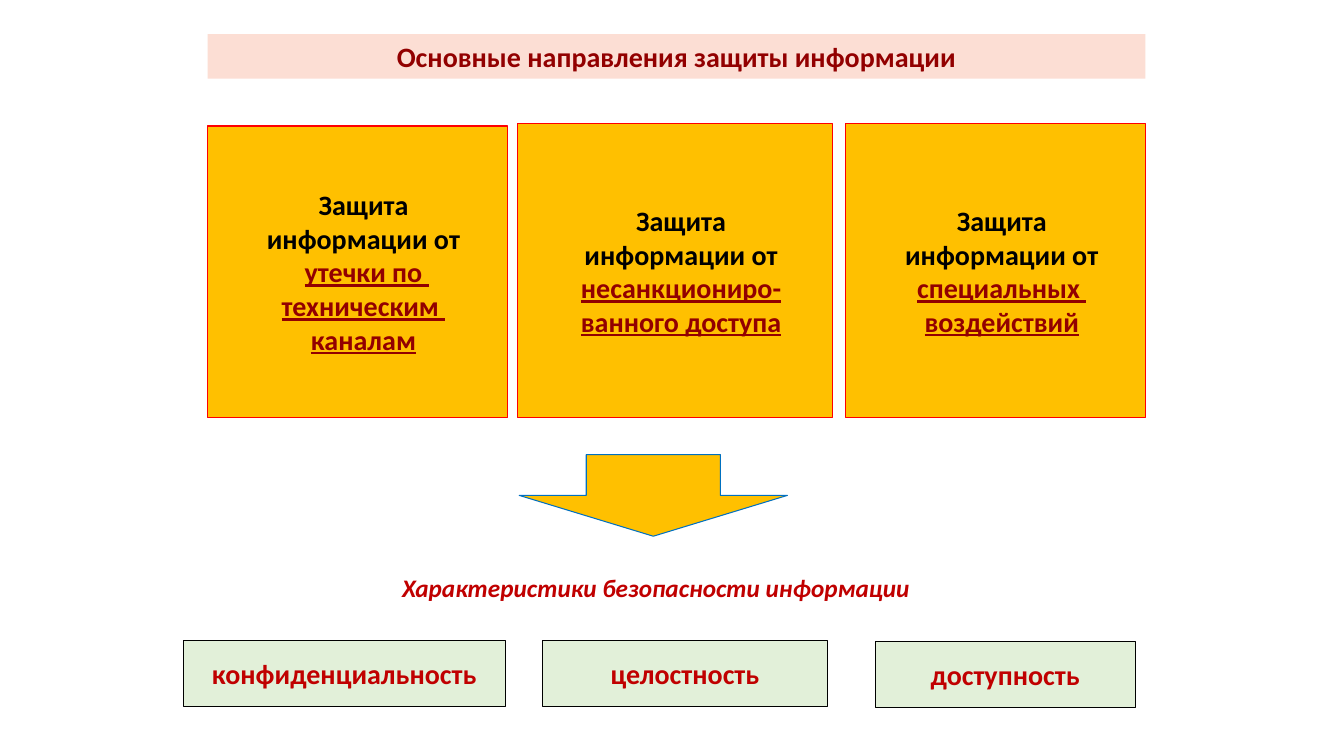
from lxml.etree import SubElement
from pptx import Presentation
from pptx.dml.color import RGBColor
from pptx.enum.shapes import MSO_SHAPE
from pptx.enum.text import MSO_ANCHOR, PP_ALIGN
from pptx.oxml.ns import qn
from pptx.util import Inches, Pt

COLORS = {
    "white": "FFFFFF",
    "black": "000000",
    "amber": "FFC000",
    "red": "FF0000",
    "blue": "0070C0",
    "green": "E2F0D9",
    "rose": "FCDED4",
    "maroon": "920000",
    "crimson": "C00000",
}

DIRECTIONS = [
    ((2.06, 1.25, 2.97, 2.89), False, [
        [("Защита", False)],
        [("информации от", False)],
        [(" ", False), ("утечки по ", True)],
        [("техническим ", True)],
        [("каналам", True)],
    ]),
    ((5.13, 1.23, 3.13, 2.91), True, [
        [("Защита", False)],
        [("информации от ", False), ("несанкциониро-ванного доступа", True)],
    ]),
    ((8.39, 1.23, 2.97, 2.91), True, [
        [("Защита", False)],
        [("информации от ", False), ("специальных ", True)],
        [("воздействий", True)],
    ]),
]

PROPERTIES = [
    ((1.82, 6.35, 3.19, 0.66), "конфиденциальность"),
    ((5.38, 6.35, 2.83, 0.66), "целостность"),
    ((8.68, 6.36, 2.58, 0.66), "доступность"),
]


def rgb(color):
    return RGBColor.from_string(COLORS[color])


def add_block(slide, box, fill, line=None, preset=MSO_SHAPE.RECTANGLE):
    block = slide.shapes.add_shape(preset, *map(Inches, box))
    block.shadow.inherit = False
    block.fill.solid()
    block.fill.fore_color.rgb = rgb(fill)
    if line:
        block.line.color.rgb = rgb(line)
        block.line.width = Pt(0.75)
    else:
        block.line.fill.background()
    return block


def style_run(run, color, size=20, italic=None, underline=None):
    run.font.name = "Calibri"
    run.font.size = Pt(size)
    run.font.bold = True
    run.font.italic = italic
    run.font.underline = underline
    run.font.color.rgb = rgb(color)


def write_label(block, text, color, align=PP_ALIGN.CENTER, anchor=MSO_ANCHOR.MIDDLE,
                wrap=True, size=20, italic=None):
    frame = block.text_frame
    frame.text = text
    frame.word_wrap = wrap
    frame.vertical_anchor = anchor
    paragraph = frame.paragraphs[0]
    paragraph.alignment = align
    style_run(paragraph.runs[0], color, size, italic)


def add_title(slide, box):
    banner = add_block(slide, box, "rose")
    write_label(banner, "Основные направления защиты информации", "maroon",
                anchor=MSO_ANCHOR.TOP)


def add_direction(slide, box, wrap, lines):
    card = add_block(slide, box, "amber", "red")
    frame = card.text_frame
    frame.word_wrap = wrap
    frame.vertical_anchor = MSO_ANCHOR.MIDDLE
    frame.margin_left = Inches(0.22)
    for index, pieces in enumerate(lines):
        paragraph = frame.add_paragraph() if index else frame.paragraphs[0]
        paragraph.alignment = PP_ALIGN.CENTER
        for text, stressed in pieces:
            run = paragraph.add_run()
            run.text = text
            style_run(run, "maroon" if stressed else "black", underline=stressed or None)


def add_subtitle(slide, box):
    caption = add_block(slide, box, "white")
    color = caption.fill._xPr.find(qn("a:solidFill"))[0]
    SubElement(color, qn("a:alpha")).set("val", "70000")
    write_label(caption, "Характеристики безопасности информации", "crimson",
                PP_ALIGN.LEFT, MSO_ANCHOR.TOP, size=18, italic=True)


def add_property(slide, box, text):
    write_label(add_block(slide, box, "green", "black"), text, "crimson", wrap=False)


def main():
    deck = Presentation()
    deck.slide_width = Inches(13.33)
    deck.slide_height = Inches(7.5)
    slide = deck.slides.add_slide(deck.slide_layouts[6])
    add_title(slide, (2.06, 0.34, 9.3, 0.44))
    for box, wrap, lines in DIRECTIONS:
        add_direction(slide, box, wrap, lines)
    add_block(slide, (5.15, 4.51, 2.66, 0.81), "amber", "blue", MSO_SHAPE.DOWN_ARROW)
    add_subtitle(slide, (3.89, 5.63, 5.27, 0.4))
    for box, text in PROPERTIES:
        add_property(slide, box, text)
    deck.save("out.pptx")


if __name__ == "__main__":
    main()
